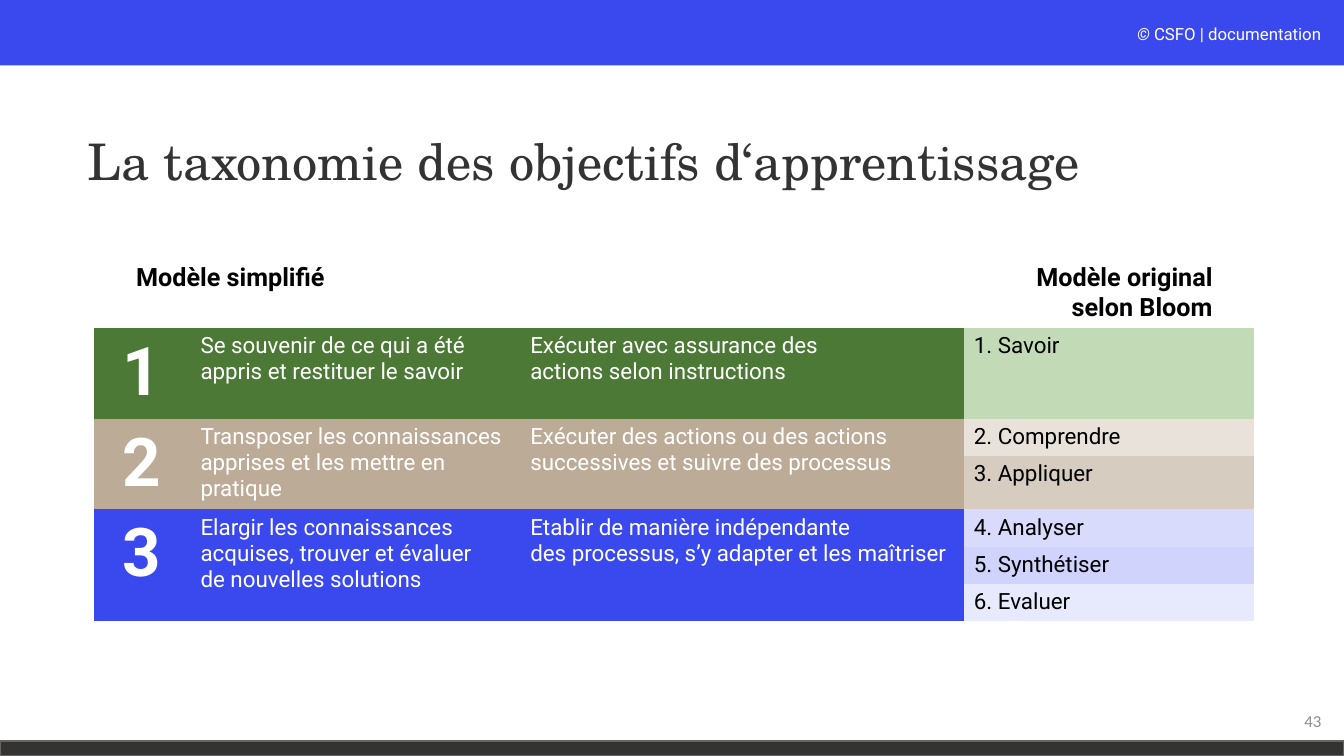
from pptx import Presentation
from pptx.dml.color import RGBColor
from pptx.enum.shapes import MSO_SHAPE
from pptx.enum.text import MSO_ANCHOR, PP_ALIGN
from pptx.util import Cm, Pt

RECTANGLE = MSO_SHAPE.RECTANGLE
LEFT, CENTER, RIGHT = PP_ALIGN.LEFT, PP_ALIGN.CENTER, PP_ALIGN.RIGHT
TOP, MIDDLE = MSO_ANCHOR.TOP, MSO_ANCHOR.MIDDLE

BLUE = RGBColor(0x3A, 0x49, 0xEE)
GREEN = RGBColor(0x4C, 0x79, 0x36)
BEIGE = RGBColor(0xBC, 0xAB, 0x96)
PALE_GREEN = RGBColor(0xC2, 0xDA, 0xB6)
PALE_BEIGE = RGBColor(0xE8, 0xE2, 0xDB)
SOFT_BEIGE = RGBColor(0xD6, 0xCC, 0xBF)
LIGHT_BLUE = RGBColor(0xD8, 0xDB, 0xFC)
SOFT_BLUE = RGBColor(0xD0, 0xD3, 0xFB)
PALE_BLUE = RGBColor(0xE7, 0xE9, 0xFD)
DARK = RGBColor(0x33, 0x33, 0x33)
EDGE = RGBColor(0x66, 0x63, 0x60)
GREY = RGBColor(0x8C, 0x8C, 0x8C)
BLACK = RGBColor(0, 0, 0)
WHITE = RGBColor(0xFF, 0xFF, 0xFF)

NO_STYLE_NO_GRID = "{2D5ABB26-0587-4C30-8999-92F81FD0307C}"
COLUMN_WIDTHS = [2.44, 8.31, 11.18, 7.32]
ROW_HEIGHTS = [2.29, 0.94, 1.34, 0.94, 0.94, 0.94]

LEVELS = [
    (GREEN,
     "Se souvenir de ce qui a été\nappris et restituer le savoir",
     "Exécuter avec assurance des\nactions selon instructions",
     [("Savoir", PALE_GREEN)]),
    (BEIGE,
     "Transposer les connaissances\napprises et les mettre en pratique",
     "Exécuter des actions ou des actions successives et suivre des processus",
     [("Comprendre", PALE_BEIGE), ("Appliquer", SOFT_BEIGE)]),
    (BLUE,
     "Elargir les connaissances\nacquises, trouver et évaluer\nde nouvelles solutions",
     "Etablir de manière indépendante\ndes processus, s’y adapter et les maîtriser",
     [("Analyser", LIGHT_BLUE), ("Synthétiser", SOFT_BLUE), ("Evaluer", PALE_BLUE)]),
]


def write(frame, text, size=16, color=BLACK, font="Roboto", bold=False,
          italic=False, align=LEFT, spacing=None, new_paragraph=False):
    for index, line in enumerate(text.split("\n")):
        starts_new = new_paragraph or index > 0
        paragraph = frame.add_paragraph() if starts_new else frame.paragraphs[-1]
        paragraph.alignment = align
        if spacing:
            paragraph.line_spacing = spacing
        run = paragraph.add_run()
        run.text = line
        run.font.size = Pt(size)
        run.font.name = font
        run.font.bold = bold
        run.font.italic = italic
        run.font.color.rgb = color


def add_band(slide, top, height, fill, edge=None):
    band = slide.shapes.add_shape(RECTANGLE, 0, Cm(top), Cm(33.87), Cm(height))
    band.shadow.inherit = False
    band.fill.solid()
    band.fill.fore_color.rgb = fill
    if edge:
        band.line.color.rgb = edge
        band.line.width = Pt(1)
    else:
        band.line.fill.background()


def add_text_frame(slide, left, top, width, height, anchor=TOP, wrap=True):
    box = slide.shapes.add_textbox(Cm(left), Cm(top), Cm(width), Cm(height))
    frame = box.text_frame
    frame.word_wrap = wrap
    frame.vertical_anchor = anchor
    return frame


def fill_cell(cell, text, fill, **text_format):
    cell.fill.solid()
    cell.fill.fore_color.rgb = fill
    write(cell.text_frame, text, **text_format)


def add_taxonomy(slide):
    table = slide.shapes.add_table(
        len(ROW_HEIGHTS), len(COLUMN_WIDTHS), Cm(2.36), Cm(8.26),
        Cm(sum(COLUMN_WIDTHS)), Cm(sum(ROW_HEIGHTS))).table
    table._tbl.tblPr[0].text = NO_STYLE_NO_GRID
    table.first_row = False
    table.horz_banding = False
    for column, width in zip(table.columns, COLUMN_WIDTHS):
        column.width = Cm(width)
    for row, height in zip(table.rows, ROW_HEIGHTS):
        row.height = Cm(height)

    first = 0
    for number, (color, knowledge, action, stages) in enumerate(LEVELS, 1):
        last = first + len(stages) - 1
        if last > first:
            for column in range(3):
                table.cell(first, column).merge(table.cell(last, column))
        fill_cell(table.cell(first, 0), str(number), color,
                  size=48, color=WHITE, bold=True, align=CENTER)
        fill_cell(table.cell(first, 1), knowledge, color, color=WHITE)
        fill_cell(table.cell(first, 2), action, color, color=WHITE)
        for row, (stage, shade) in enumerate(stages, first):
            fill_cell(table.cell(row, 3), f"{row + 1}. {stage}", shade)
        first = last + 1


def main():
    presentation = Presentation()
    presentation.slide_width = Cm(33.87)
    presentation.slide_height = Cm(19.05)
    slide = presentation.slides.add_slide(presentation.slide_layouts[6])

    add_band(slide, 0, 1.65, BLUE)
    add_band(slide, 18.67, 0.38, DARK, EDGE)

    copyright_line = add_text_frame(slide, 21.89, 0.48, 11.66, 0.76)
    write(copyright_line, "© ", size=12, color=WHITE, italic=True, align=RIGHT)
    write(copyright_line, "CSFO | documentation", size=12, color=WHITE, align=RIGHT)

    add_taxonomy(slide)

    page_number = add_text_frame(slide, 25.93, 17.65, 7.62, 1.02, MIDDLE)
    write(page_number, "43", size=12, color=GREY, font="Calibri", align=RIGHT)

    title = add_text_frame(slide, 1.96, 2.31, 27.48, 3.68, MIDDLE)
    write(title, "La taxonomie des objectifs d‘apprentissage",
          size=36, color=DARK, font="TeX Gyre Schola", spacing=0.9)

    simplified = add_text_frame(slide, 3.18, 6.45, 5.51, 1.02, wrap=False)
    write(simplified, "Modèle simplifié", size=18, bold=True)

    bloom = add_text_frame(slide, 25.63, 6.45, 5.18, 1.8, wrap=False)
    write(bloom, "Modèle original\nselon Bloom", size=18, bold=True, align=RIGHT)

    presentation.save("out.pptx")


if __name__ == "__main__":
    main()
